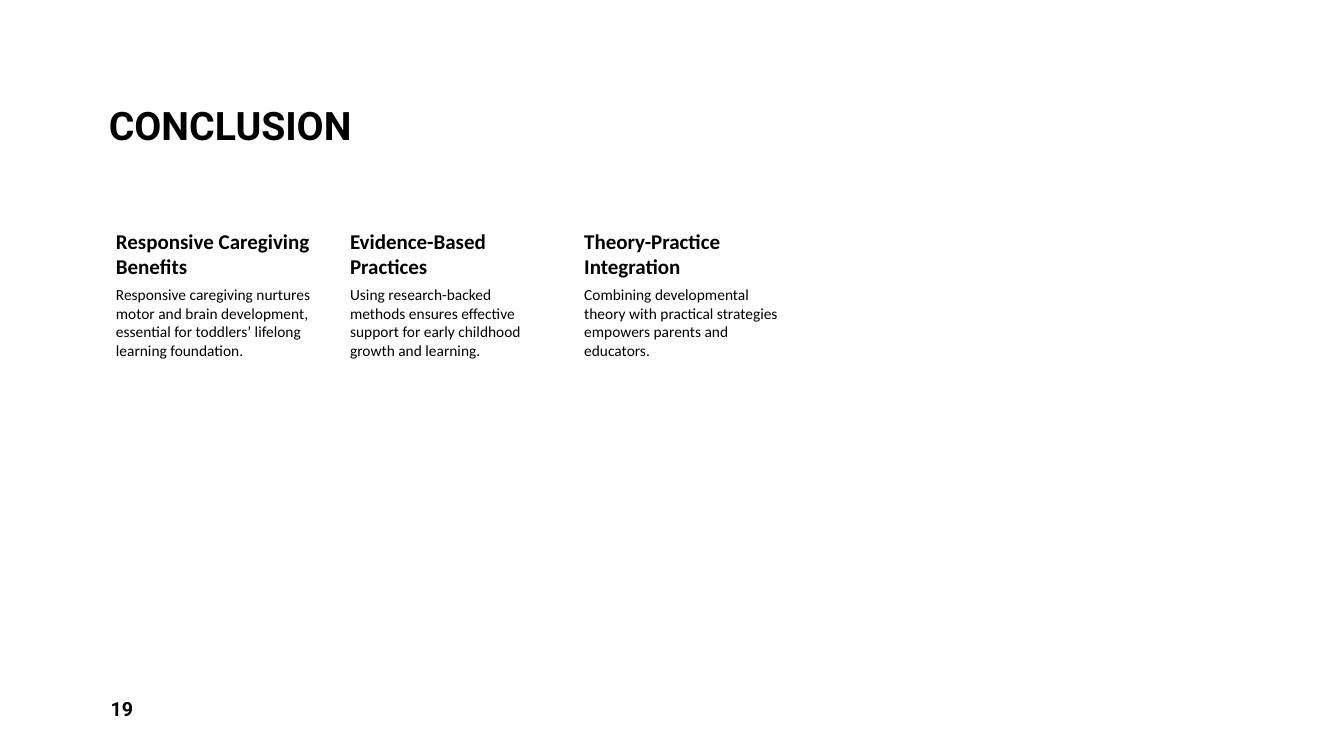
from pptx import Presentation
from pptx.dml.color import RGBColor
from pptx.enum.text import MSO_ANCHOR, MSO_AUTO_SIZE, PP_ALIGN
from pptx.util import Pt

INK = "000000"
LEFT, STEP, WIDE = 72, 167.25, 152.64
POINTS = [
    ("Responsive Caregiving Benefits",
     "Responsive caregiving nurtures motor and brain development, "
     "essential for toddlers’ lifelong learning foundation."),
    ("Evidence-Based Practices",
     "Using research-backed methods ensures effective support for "
     "early childhood growth and learning."),
    ("Theory-Practice Integration",
     "Combining developmental theory with practical strategies "
     "empowers parents and educators."),
]


def paint(font, color):
    font.color.rgb = RGBColor.from_string(color)


def write(shape, text, size, face, bold=False, anchor=MSO_ANCHOR.TOP):
    frame = shape.text_frame
    frame.text = text
    frame.word_wrap = True
    frame.auto_size = MSO_AUTO_SIZE.NONE
    frame.vertical_anchor = anchor
    line = frame.paragraphs[0]
    line.alignment = PP_ALIGN.LEFT
    font = line.runs[0].font
    font.size, font.name, font.bold = Pt(size), face, bold
    paint(font, color=INK)
    return line


def add_title(slide, text):
    title = slide.shapes.title
    title.left, title.top = Pt(70.56), Pt(5.76)
    title.width, title.height = Pt(819.36), Pt(104.4)
    line = write(title, text, 28, "Roboto", True, MSO_ANCHOR.BOTTOM)
    line.line_spacing = 0.9


def add_text(shapes, text, left, top, high, size, bold=False):
    box = shapes.add_textbox(Pt(left), Pt(top), Pt(WIDE), Pt(high))
    write(box, text, size, "Calibri", bold)
    frame = box.text_frame
    frame.margin_left = Pt(10.8)
    frame.margin_top = frame.margin_right = frame.margin_bottom = Pt(1.44)


def add_point(shapes, left, head, body):
    add_text(shapes, head, left, 162, 40.32, 15, True)
    add_text(shapes, body, left, 202.32, 229.68, 11)


def add_number(slide, text):
    box = slide.shapes.add_textbox(Pt(LEFT), Pt(491.76), Pt(210.24), Pt(28.8))
    line = write(box, text, 14, "Roboto", True, MSO_ANCHOR.MIDDLE)
    line.space_after = Pt(6)


def main():
    deck = Presentation()
    deck.slide_width, deck.slide_height = Pt(960), Pt(540)
    slide = deck.slides.add_slide(deck.slide_layouts[5])

    # Title
    add_title(slide, "CONCLUSION")

    # Grouped columns
    group = slide.shapes.add_group_shape()
    for col, (head, body) in enumerate(POINTS):
        add_point(group.shapes, LEFT + col * STEP, head, body)

    # Slide number
    add_number(slide, "19")
    deck.save("out.pptx")


if __name__ == "__main__":
    main()
